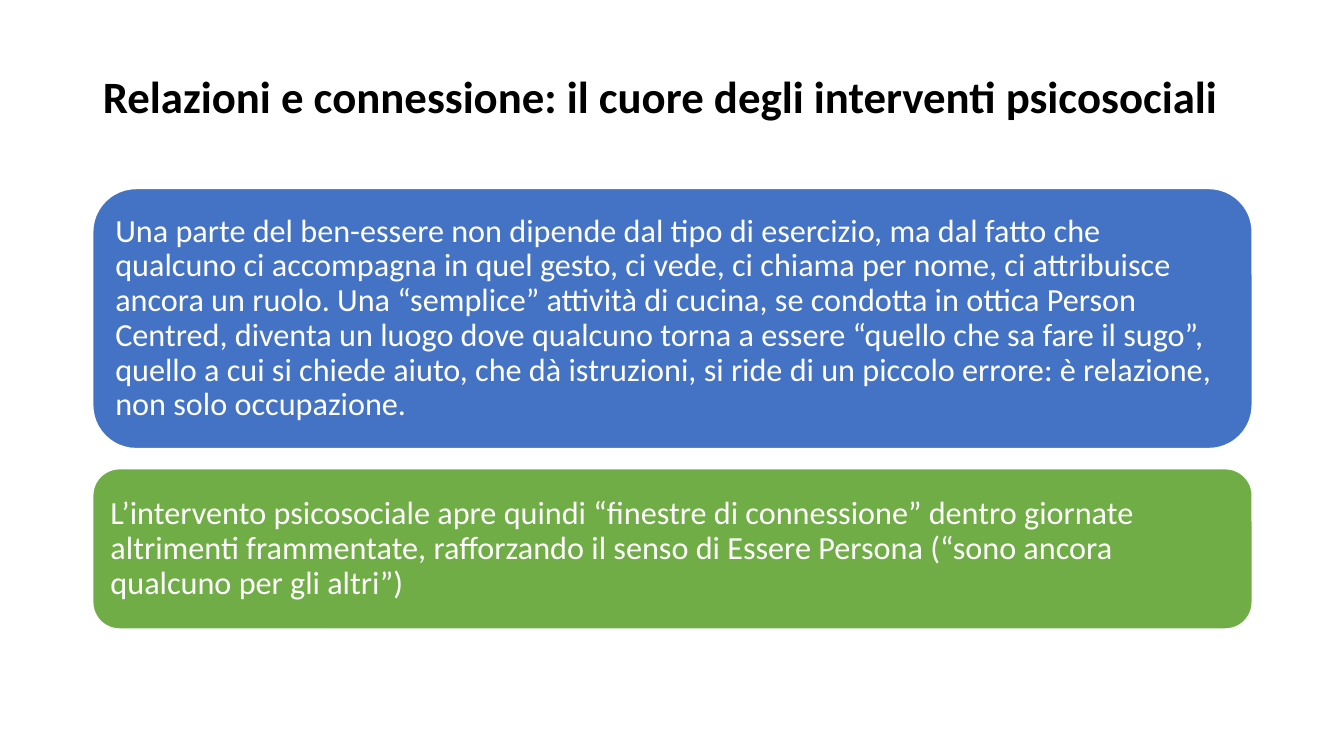
from pptx import Presentation
from pptx.dml.color import RGBColor
from pptx.enum import shapes, text
from pptx.util import Inches, Pt

THEME = {
    "font": "Calibri", "title": 32, "body": 23,
    "black": "000000", "white": "FFFFFF", "blue": "4472C4", "green": "70AD47",
}
TITLE = "Relazioni e connessione: il cuore degli interventi psicosociali"
# Each panel: text, fill, height in inches
PANELS = [
    ("Una parte del ben-essere non dipende dal tipo di esercizio, ma dal fatto che "
     "qualcuno ci accompagna in quel gesto, ci vede, ci chiama per nome, ci attribuisce "
     "ancora un ruolo. Una “semplice” attività di cucina, se condotta in ottica Person "
     "Centred, diventa un luogo dove qualcuno torna a essere “quello che sa fare il sugo”, "
     "quello a cui si chiede aiuto, che dà istruzioni, si ride di un piccolo errore: "
     "è relazione, non solo occupazione.", "blue", 2.58),
    ("L’intervento psicosociale apre quindi “finestre di connessione” dentro giornate "
     "altrimenti frammentate, rafforzando il senso di Essere Persona (“sono ancora "
     "qualcuno per gli altri”)", "green", 1.59),
]
LEFT, WIDTH = 0.92, 11.5
TOP, GAP = 1.87, 0.2


def color(name):
    return RGBColor.from_string(THEME[name])


def write(shape, words, size, ink, bold=False, inset=(0.1, 0.1)):
    frame = shape.text_frame
    frame.word_wrap = True
    frame.auto_size = text.MSO_AUTO_SIZE.NONE
    frame.vertical_anchor = text.MSO_ANCHOR.MIDDLE
    frame.margin_left = frame.margin_right = Inches(inset[0])
    frame.margin_top = frame.margin_bottom = Inches(inset[1])
    frame.text = words
    para = frame.paragraphs[0]
    para.alignment = text.PP_ALIGN.LEFT
    para.line_spacing = 0.9
    font = para.runs[0].font
    font.name, font.size, font.bold = THEME["font"], Pt(THEME[size]), bold
    font.color.rgb = color(ink)


def panel(slide, words, fill, top, height):
    box = slide.shapes.add_shape(
        shapes.MSO_SHAPE.ROUNDED_RECTANGLE,
        Inches(LEFT), Inches(top), Inches(WIDTH), Inches(height))
    box.shadow.inherit = False
    box.fill.solid()
    box.fill.fore_color.rgb = color(fill)
    box.line.color.rgb = color("white")
    box.line.width = Pt(1)
    write(box, words, "body", "white")


def main():
    deck = Presentation()
    deck.slide_width, deck.slide_height = Inches(13.33), Inches(7.5)
    slide = deck.slides.add_slide(deck.slide_layouts[5])

    title = slide.shapes.title
    title.left, title.top = Inches(LEFT), Inches(0.48)
    title.width, title.height = Inches(WIDTH), Inches(1.01)
    write(title, TITLE, "title", "black", bold=True, inset=(0.1, 0.05))

    top = TOP
    for words, fill, height in PANELS:
        panel(slide, words, fill, top, height)
        top += height + GAP
    deck.save("out.pptx")


if __name__ == "__main__":
    main()
